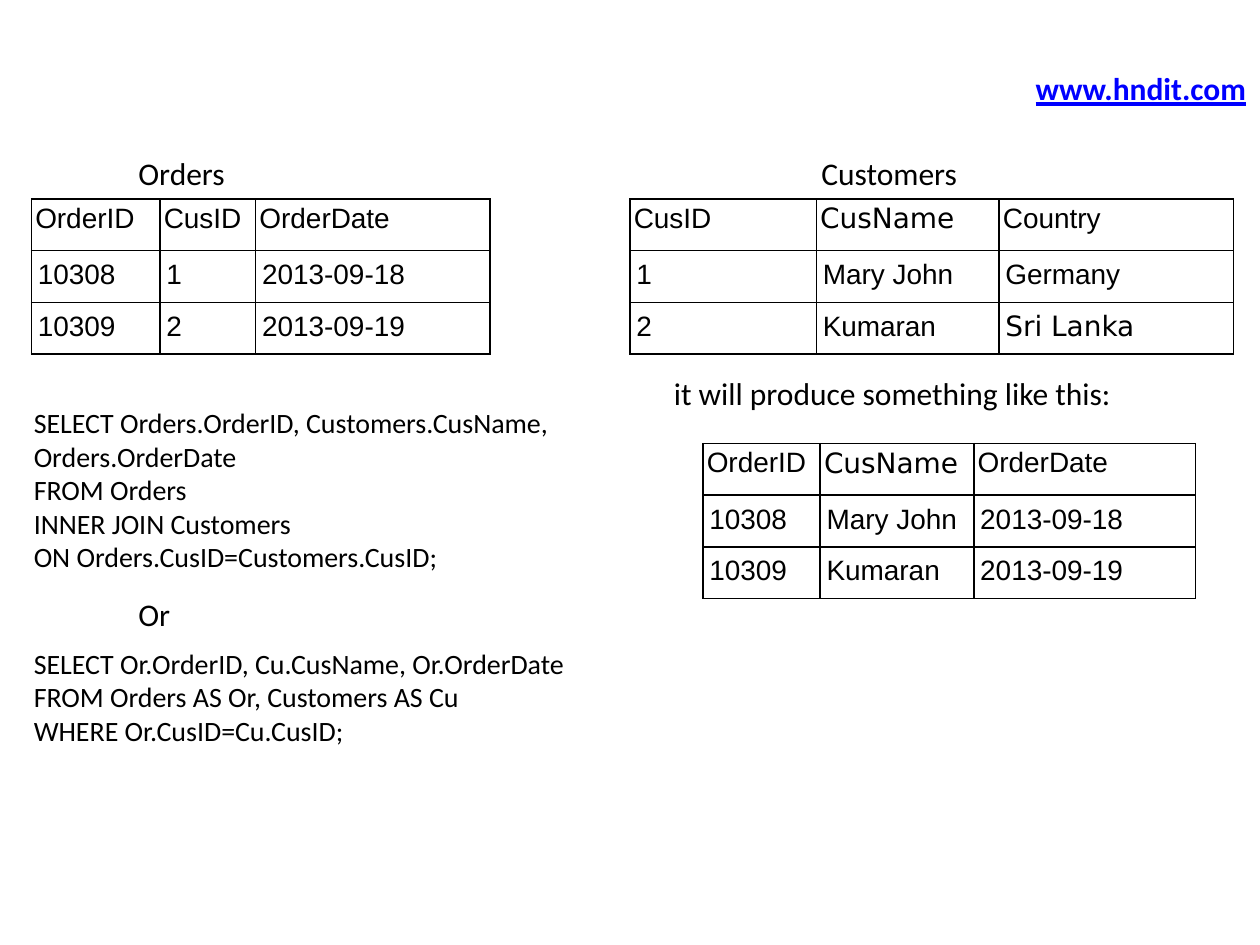
from lxml import etree
from pptx import Presentation
from pptx.dml.color import RGBColor
from pptx.enum.text import MSO_AUTO_SIZE
from pptx.oxml.ns import qn
from pptx.util import Inches, Pt

COLORS = {"text": "000000", "border": "000000", "link": "0000FF"}
ROW_HEIGHT = 0.41
ALT_FONT_CELLS = {"CusName", "Sri Lanka"}

JOIN_QUERY = """SELECT Orders.OrderID, Customers.CusName, Orders.OrderDate
FROM Orders
INNER JOIN Customers
ON Orders.CusID=Customers.CusID;"""

ALIAS_QUERY = """SELECT Or.OrderID, Cu.CusName, Or.OrderDate
FROM Orders AS Or, Customers AS Cu
WHERE Or.CusID=Cu.CusID;"""


def write(p, text, size=18, font="Calibri", color="text", bold=False, underline=False):
    """Fill a paragraph with text, turning newlines into line breaks."""
    for i, line in enumerate(text.split("\n")):
        if i:
            p.add_line_break()
        r = p.add_run()
        r.text = line
        r.font.size = Pt(size)
        r.font.name = font
        r.font.bold = bold
        r.font.underline = underline
        r.font.color.rgb = RGBColor.from_string(COLORS[color])


class SlideBuilder:
    def __init__(self, slide):
        self.slide = slide

    def text(self, text, left, top, width, height, wrap=False, **style):
        sp = self.slide.shapes.add_textbox(
            Inches(left), Inches(top), Inches(width), Inches(height))
        tf = sp.text_frame
        tf.word_wrap = wrap
        tf.auto_size = MSO_AUTO_SIZE.SHAPE_TO_FIT_TEXT
        write(tf.paragraphs[0], text, **style)

    def table(self, rows, left, top, widths):
        frame = self.slide.shapes.add_table(
            len(rows), len(widths), Inches(left), Inches(top),
            Inches(sum(widths)), Inches(ROW_HEIGHT * len(rows)))
        table = frame.table
        table.first_row = table.horz_banding = False
        for column, width in zip(table.columns, widths):
            column.width = Inches(width)
        for i, row in enumerate(rows):
            table.rows[i].height = Inches(ROW_HEIGHT)
            side, edge = (0.05, 0.07) if i else (0.03, 0.03)
            for j, value in enumerate(row):
                cell = table.cell(i, j)
                cell.margin_left = cell.margin_right = Inches(side)
                cell.margin_top = cell.margin_bottom = Inches(edge)
                font = "DejaVu Sans" if value in ALT_FONT_CELLS else "Arial"
                write(cell.text_frame.paragraphs[0], value, size=16, font=font)
                self.borders(cell)
                cell.fill.background()

    def borders(self, cell):
        tcPr = cell._tc.get_or_add_tcPr()
        for tag in ("a:lnL", "a:lnR", "a:lnT", "a:lnB"):
            ln = etree.SubElement(tcPr, qn(tag), w=str(Pt(1)))
            fill = etree.SubElement(ln, qn("a:solidFill"))
            etree.SubElement(fill, qn("a:srgbClr"), val=COLORS["border"])


def main():
    prs = Presentation()
    prs.slide_width, prs.slide_height = Inches(10), Inches(7.5)
    s = SlideBuilder(prs.slides.add_slide(prs.slide_layouts[6]))

    # Source tables
    s.table([["OrderID", "CusID", "OrderDate"],
             ["10308", "1", "2013-09-18"],
             ["10309", "2", "2013-09-19"]], 0.25, 1.58, [1.02, 0.76, 1.86])
    s.table([["CusID", "CusName", "Country"],
             ["1", "Mary John", "Germany"],
             ["2", "Kumaran", "Sri Lanka"]], 5, 1.58, [1.48, 1.45, 1.86])

    # First query and the joined result
    s.text(JOIN_QUERY, 0.17, 3.17, 5.33, 1.45, wrap=True, size=16)
    s.table([["OrderID", "CusName", "OrderDate"],
             ["10308", "Mary John", "2013-09-18"],
             ["10309", "Kumaran", "2013-09-19"]], 5.58, 3.52, [0.93, 1.22, 1.76])

    # Table names
    s.text("Orders", 1, 1.17, 1.12, 0.44)
    s.text("Customers", 6.42, 1.17, 1.67, 0.44)

    # Second query, captions and web address
    s.text(ALIAS_QUERY, 0.17, 5.08, 5.33, 0.91, wrap=True, size=16)
    s.text("Or", 1, 4.67, 0.53, 0.44)
    s.text("it will produce something like this:", 5.25, 2.92, 4.79, 0.44)
    s.text("www.hndit.com", 8.12, 0.5, 1.88, 0.4,
           color="link", bold=True, underline=True)

    prs.save("out.pptx")


if __name__ == "__main__":
    main()
